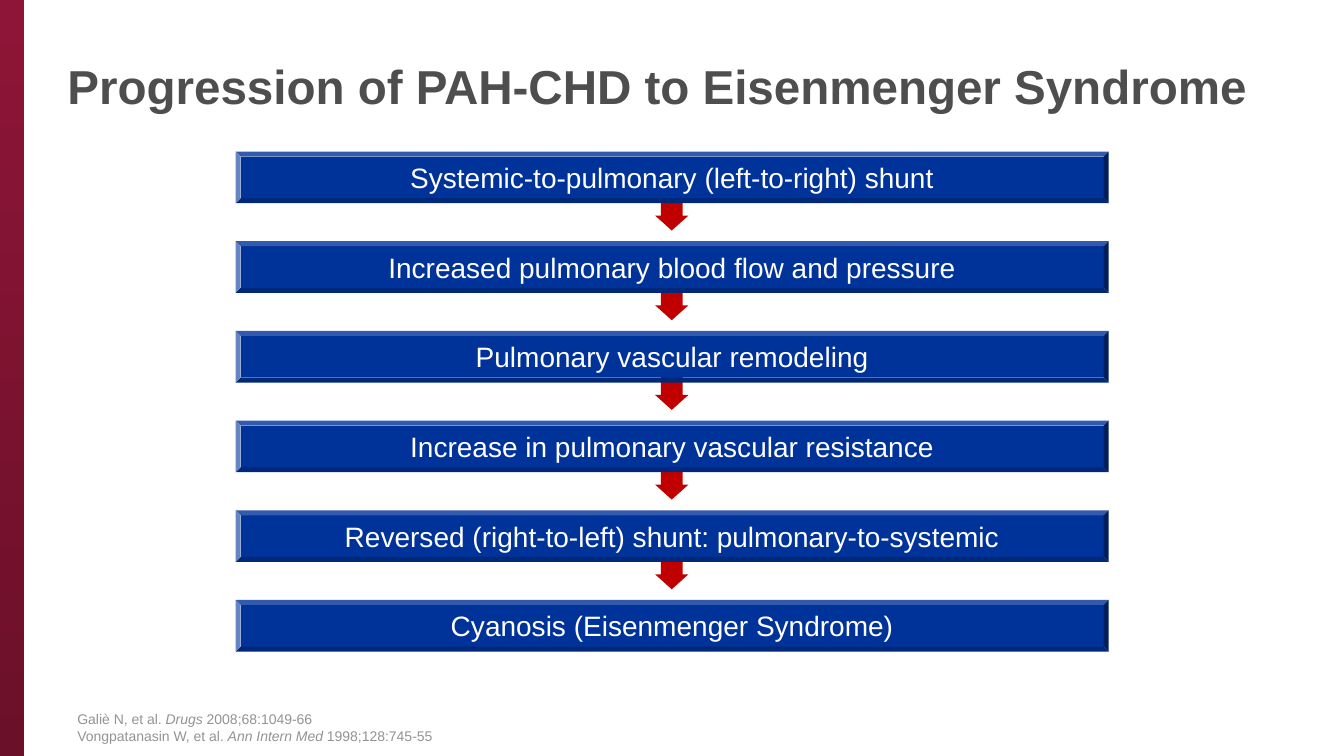
from dataclasses import dataclass

from pptx import Presentation
from pptx import util as u
from pptx.dml import color
from pptx.enum import shapes, text

FONT = "Arial"
STEPS = [
    "Systemic-to-pulmonary (left-to-right) shunt",
    "Increased pulmonary blood flow and pressure",
    "Pulmonary vascular remodeling",
    "Increase in pulmonary vascular resistance",
    "Reversed (right-to-left) shunt: pulmonary-to-systemic",
    "Cyanosis (Eisenmenger Syndrome)",
]
PITCH = 2.26


@dataclass
class Box:
    """Place and size in centimetres."""
    left: float
    top: float
    width: float
    height: float

    def lengths(self) -> list:
        return [u.Cm(n) for n in (self.left, self.top, self.width, self.height)]

    def lower(self, row: int) -> "Box":
        """The same box, moved down by whole steps."""
        return Box(self.left, self.top + row * PITCH, self.width, self.height)


@dataclass
class Cite:
    author: str
    journal: str
    issue: str


BAND = Box(-0.03, 0, 0.64, 19.07)
TITLE = Box(1.7, 0.56, 29.85, 3.3)
BAR = Box(5.94, 3.82, 22, 1.3)
ARROW = Box(16.51, 4.72, 0.84, 1.09)
NOTES = Box(1.7, 17.65, 29.85, 1.22)
CITES = [
    Cite("Galiè N, et al. ", "Drugs", " 2008;68:1049-66"),
    Cite("Vongpatanasin W, et al. ", "Ann Intern Med ", "1998;128:745-55"),
]


def rgb(code: str) -> color.RGBColor:
    return color.RGBColor.from_string(code)


def style(run, size: float, code: str, bold: bool = False, italic: bool = False) -> None:
    font = run.font
    font.name, font.size = FONT, u.Pt(size)
    font.bold, font.italic = bold, italic
    font.color.rgb = rgb(code)


def add_form(slide, kind, box: Box, *adjust: float):
    """Add a preset shape without outline or shadow."""
    form = slide.shapes.add_shape(kind, *box.lengths())
    form.shadow.inherit = False
    form.line.fill.background()
    for spot, value in enumerate(adjust):
        form.adjustments[spot] = value
    return form


def add_solid(slide, kind, box: Box, code: str, *adjust: float):
    form = add_form(slide, kind, box, *adjust)
    form.fill.solid()
    form.fill.fore_color.rgb = rgb(code)
    return form


def add_text(slide, box: Box, anchor):
    frame = slide.shapes.add_textbox(*box.lengths()).text_frame
    frame.word_wrap = True
    frame.vertical_anchor = anchor
    return frame


def add_band(slide) -> None:
    fill = add_form(slide, shapes.MSO_SHAPE.RECTANGLE, BAND).fill
    fill.gradient()
    fill.gradient_angle = 270
    for stop, code in zip(fill.gradient_stops, ("8E1537", "6B1029")):
        stop.color.rgb = rgb(code)


def add_title(slide) -> None:
    frame = add_text(slide, TITLE, text.MSO_ANCHOR.MIDDLE)
    frame.margin_left = frame.margin_right = frame.margin_top = 0
    frame.margin_bottom = u.Cm(0.1)
    frame.text = "Progression of PAH-CHD to Eisenmenger Syndrome"
    style(frame.paragraphs[0].runs[0], 34, "4D4E4D", bold=True)


def add_steps(slide) -> None:
    for row in range(len(STEPS) - 1):
        add_solid(slide, shapes.MSO_SHAPE.DOWN_ARROW, ARROW.lower(row),
                  "C00000", 0.646, 0.448)
    for row, label in enumerate(STEPS):
        bar = add_solid(slide, shapes.MSO_SHAPE.BEVEL, BAR.lower(row), "003399", 0.097)
        frame = bar.text_frame
        frame.word_wrap = False
        frame.vertical_anchor = text.MSO_ANCHOR.MIDDLE
        frame.text = label
        line = frame.paragraphs[0]
        line.alignment = text.PP_ALIGN.CENTER
        style(line.runs[0], 20, "FFFFFF")


def add_notes(slide) -> None:
    """Add the source references at the foot of the slide."""
    frame = add_text(slide, NOTES, text.MSO_ANCHOR.BOTTOM)
    for row, cite in enumerate(CITES):
        line = frame.add_paragraph() if row else frame.paragraphs[0]
        for part in (cite.author, cite.journal, cite.issue):
            run = line.add_run()
            run.text = part
            style(run, 10, "939393", italic=part == cite.journal)


def main() -> None:
    deck = Presentation()
    deck.slide_width, deck.slide_height = u.Cm(33.87), u.Cm(19.05)
    slide = deck.slides.add_slide(deck.slide_layouts[6])
    add_band(slide)
    add_title(slide)
    add_steps(slide)
    add_notes(slide)
    deck.save("out.pptx")


if __name__ == "__main__":
    main()
